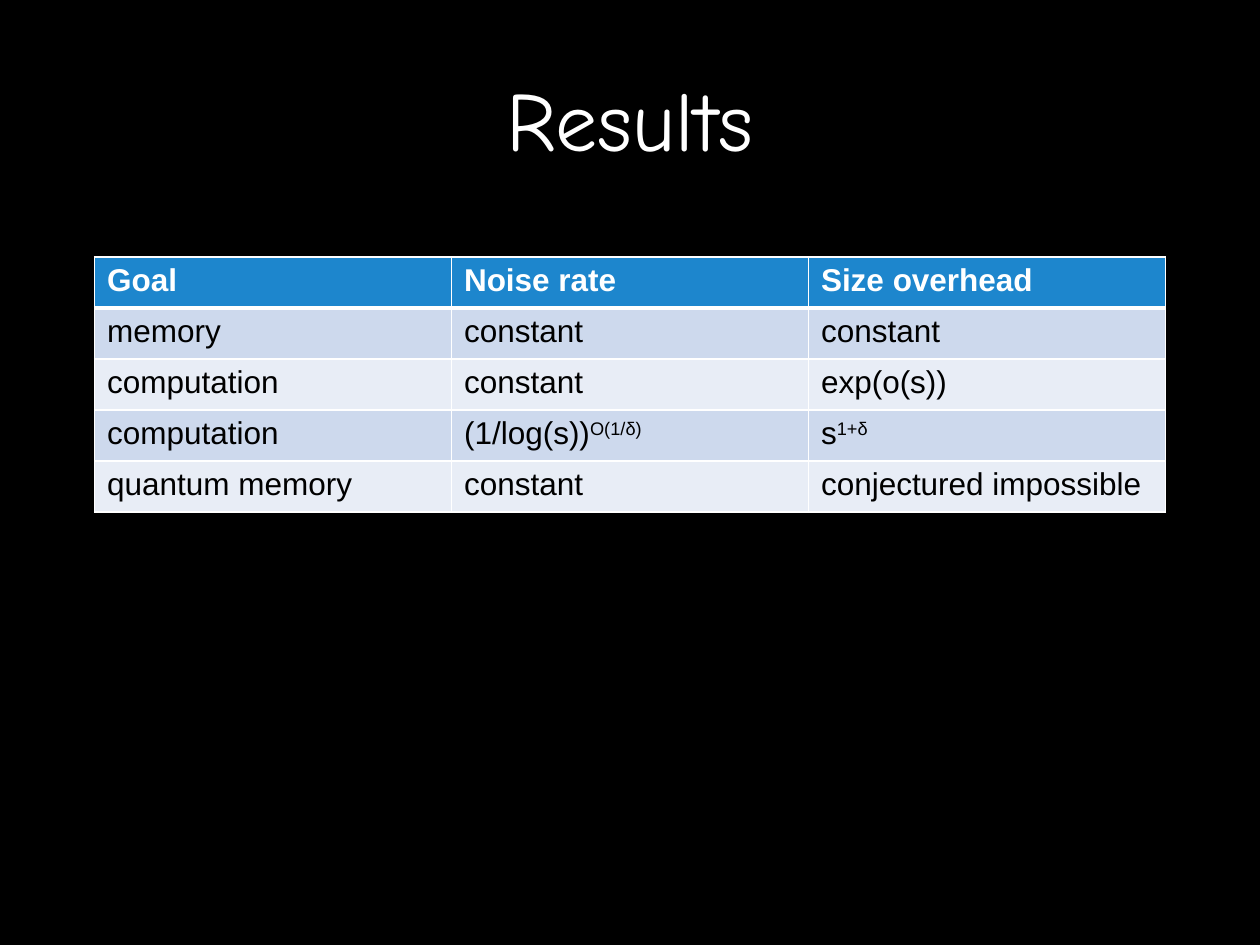
from lxml import etree
from pptx import Presentation
from pptx import util as u
from pptx.dml.color import RGBColor
from pptx.enum import text
from pptx.oxml.ns import qn

WHITE, BLACK, BLUE = "FFFFFF", "000000", "1D86CD"
BANDS = ("CDD9ED", "E8EDF6")

RESULTS = [
    ("Goal", "Noise rate", "Size overhead"),
    ("memory", "constant", "constant"),
    ("computation", "constant", "exp(o(s))"),
    ("computation", "(1/log(s))^O(1/δ)", "s^1+δ"),
    ("quantum memory", "constant", "conjectured impossible"),
]


def color(value):
    return RGBColor.from_string(value)


class SlideBuilder:
    title_font, body_font = "Comic Neue", "Arial"

    def __init__(self, deck, background):
        self.width, self.height = deck.slide_width, deck.slide_height
        self.page = deck.slides.add_slide(deck.slide_layouts[5])
        fill = self.page.background.fill
        fill.solid()
        fill.fore_color.rgb = color(background)

    def area(self, left, top, width, height):
        return (int(left * self.width), int(top * self.height),
                int(width * self.width), int(height * self.height))

    def style(self, para, name, size, ink, bold=False):
        para.font.name, para.font.size, para.font.bold = name, u.Pt(size), bold
        para.font.color.rgb = color(ink)

    def title(self, words, *shares):
        box = self.page.shapes.title
        box.left, box.top, box.width, box.height = self.area(*shares)
        box.text_frame.text = words
        box.text_frame.vertical_anchor = text.MSO_ANCHOR.MIDDLE
        para = box.text_frame.paragraphs[0]
        para.alignment = text.PP_ALIGN.CENTER
        self.style(para, self.title_font, 48, WHITE)

    def borders(self, cell, **points):
        properties = cell._tc.get_or_add_tcPr()
        for side in "LRTB":
            line = etree.SubElement(properties, qn(f"a:ln{side}"),
                                    w=str(u.Pt(points.get(side, 1))))
            fill = etree.SubElement(line, qn("a:solidFill"))
            etree.SubElement(fill, qn("a:srgbClr"), val=WHITE)

    def cell(self, cell, words, row):
        header = row == 0
        self.borders(cell, T=3 if row == 1 else 1, B=3 if header else 1)
        cell.fill.solid()
        cell.fill.fore_color.rgb = color(BLUE if header else BANDS[(row - 1) % 2])
        para = cell.text_frame.paragraphs[0]
        base, _, power = words.partition("^")
        para.add_run().text = base
        if power:
            span = para.add_run()
            span.text = power
            span._r.get_or_add_rPr().set("baseline", "30000")
        self.style(para, self.body_font, 18, WHITE if header else BLACK, header)

    def table(self, rows, *shares):
        frame = self.page.shapes.add_table(len(rows), len(rows[0]), *self.area(*shares))
        for row, values in enumerate(rows):
            for column, words in enumerate(values):
                self.cell(frame.table.cell(row, column), words, row)


def main():
    deck = Presentation()
    deck.slide_width, deck.slide_height = u.Inches(10), u.Inches(7.5)
    slide = SlideBuilder(deck, BLACK)
    margin = 0.075
    content = 1 - 2 * margin
    slide.title("Results", margin, 0.02, content, 0.21)
    slide.table(RESULTS, margin, 0.272, content, 0.27)
    deck.save("out.pptx")


if __name__ == "__main__":
    main()
